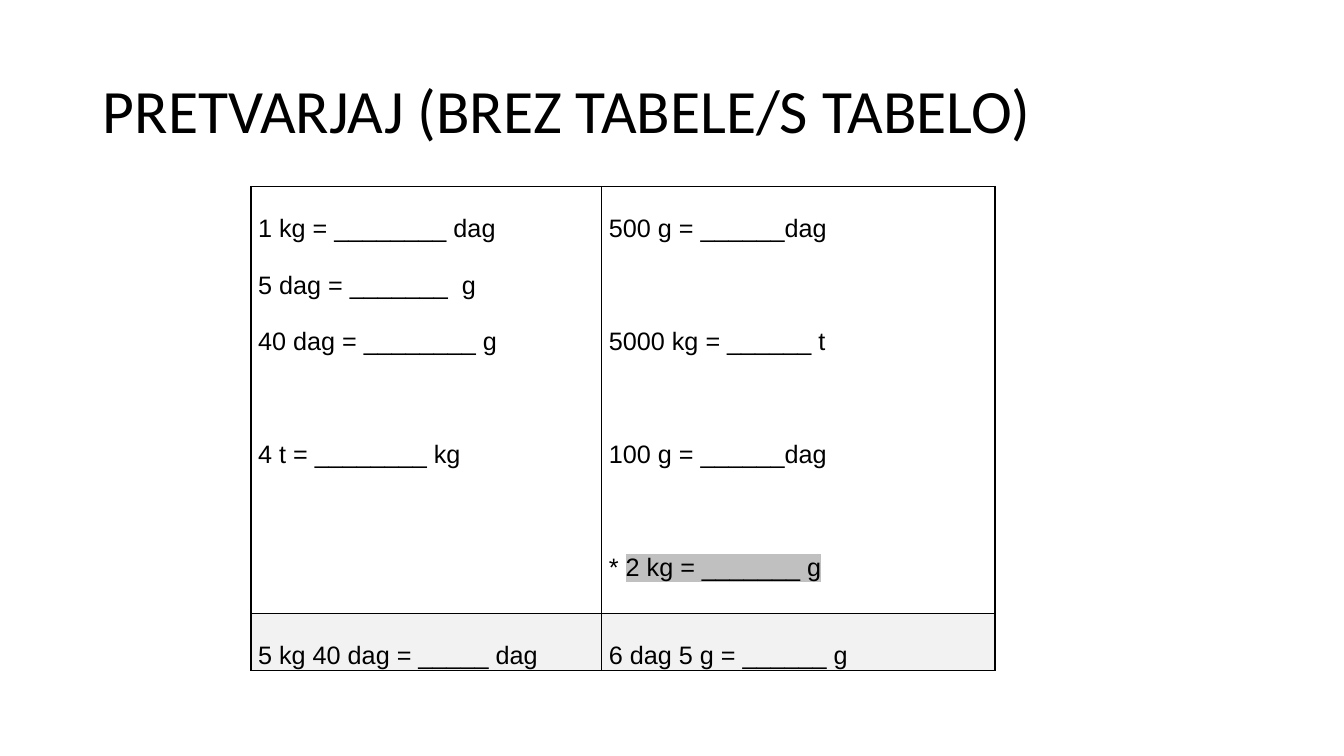
from lxml.etree import SubElement
from pptx import Presentation
from pptx.dml.color import RGBColor
from pptx.enum.text import MSO_ANCHOR, PP_ALIGN
from pptx.oxml import parse_xml
from pptx.oxml.ns import qn
from pptx.util import Inches, Pt

WIDE, HIGH = Inches(13.33), Inches(7.5)
INK, SHADE, MARK = "000000", "F2F2F2", "C0C0C0"
GAP = 40.4  # one empty double-spaced line, in points
NS = 'xmlns:a="http://schemas.openxmlformats.org/drawingml/2006/main"'

# Each line: space before in points, then plain text and marked text
TASKS = [
    [
        [(0, "1 kg = ________ dag", ""), (0, "5 dag = _______  g", ""),
         (0, "40 dag = ________ g", ""), (GAP, "4 t = ________ kg", "")],
        [(0, "500 g = ______dag", ""), (GAP, "5000 kg = ______ t", ""),
         (GAP, "100 g = ______dag", ""), (GAP, "* ", "2 kg = _______ g")],
    ],
    [
        [(0, "5 kg 40 dag = _____ dag", "")],
        [(0, "6 dag 5 g = ______ g", "")],
    ],
]


def paint(code):
    return RGBColor.from_string(code)


def assign(item, values):
    for name, value in values.items():
        setattr(item, name, value)


def across(share):
    """Turn a percentage of the slide width into a length."""
    return int(WIDE * share / 100)


def down(share):
    """Turn a percentage of the slide height into a length."""
    return int(HIGH * share / 100)


class Sheet:
    """The current slide together with its text styles."""

    head = {"name": "Calibri", "size": Pt(44)}
    body = {"name": "Arial", "size": Pt(18)}

    def __init__(self, deck):
        self.slide = deck.slides.add_slide(deck.slide_layouts[5])

    def text(self, para, words, style, mark=""):
        run = para.add_run()
        run.text = words
        assign(run.font, style)
        run.font.color.rgb = paint(INK)
        if mark:
            light = parse_xml(f'<a:highlight {NS}><a:srgbClr val="{mark}"/></a:highlight>')
            run.font._element.find(qn("a:latin")).addprevious(light)

    def title(self, words, left, top, width, height):
        shape = self.slide.shapes.title
        assign(shape, {"left": across(left), "top": down(top),
                       "width": across(width), "height": down(height)})
        assign(shape.text_frame, {"vertical_anchor": MSO_ANCHOR.MIDDLE, "word_wrap": True})
        para = shape.text_frame.paragraphs[0]
        assign(para, {"alignment": PP_ALIGN.LEFT, "line_spacing": 0.9})
        self.text(para, words, self.head)

    def border(self, cell):
        props = cell._tc.get_or_add_tcPr()
        for side in ("lnL", "lnR", "lnT", "lnB"):
            line = SubElement(props, qn(f"a:{side}"), w=str(Pt(1)))
            fill = SubElement(line, qn("a:solidFill"))
            SubElement(fill, qn("a:srgbClr"), val=INK)

    def cell(self, cell, lines, shade):
        assign(cell, {"margin_left": Inches(0.07), "margin_right": Inches(0.07),
                      "margin_top": 0, "margin_bottom": 0})
        self.border(cell)
        if shade:
            cell.fill.solid()
            cell.fill.fore_color.rgb = paint(shade)
        else:
            cell.fill.background()
        frame = cell.text_frame
        for index, (space, plain, marked) in enumerate(lines):
            para = frame.add_paragraph() if index else frame.paragraphs[0]
            assign(para, {"line_spacing": 2.0, "space_before": Pt(space)})
            self.text(para, plain, self.body)
            if marked:
                self.text(para, marked, self.body, MARK)

    def table(self, data, left, top, cols, rows, shades):
        frame = self.slide.shapes.add_table(len(rows), len(cols), across(left), down(top),
                                            across(sum(cols)), down(sum(rows)))
        grid = frame.table
        assign(grid, {"first_row": False, "horz_banding": False})
        for col, width in zip(grid.columns, cols):
            col.width = across(width)
        for row, height, cells, shade in zip(grid.rows, rows, data, shades):
            row.height = down(height)
            for cell, lines in zip(row.cells, cells):
                self.cell(cell, lines, shade)


def main():
    deck = Presentation()
    assign(deck, {"slide_width": WIDE, "slide_height": HIGH})
    sheet = Sheet(deck)
    sheet.title("PRETVARJAJ (BREZ TABELE/S TABELO)", 6.9, 5.33, 86.27, 19.33)
    sheet.table(TASKS, 18.68, 24.67, cols=(26.1, 29.26), rows=(56.5, 6.13),
                shades=(None, SHADE))
    deck.save("out.pptx")


if __name__ == "__main__":
    main()
